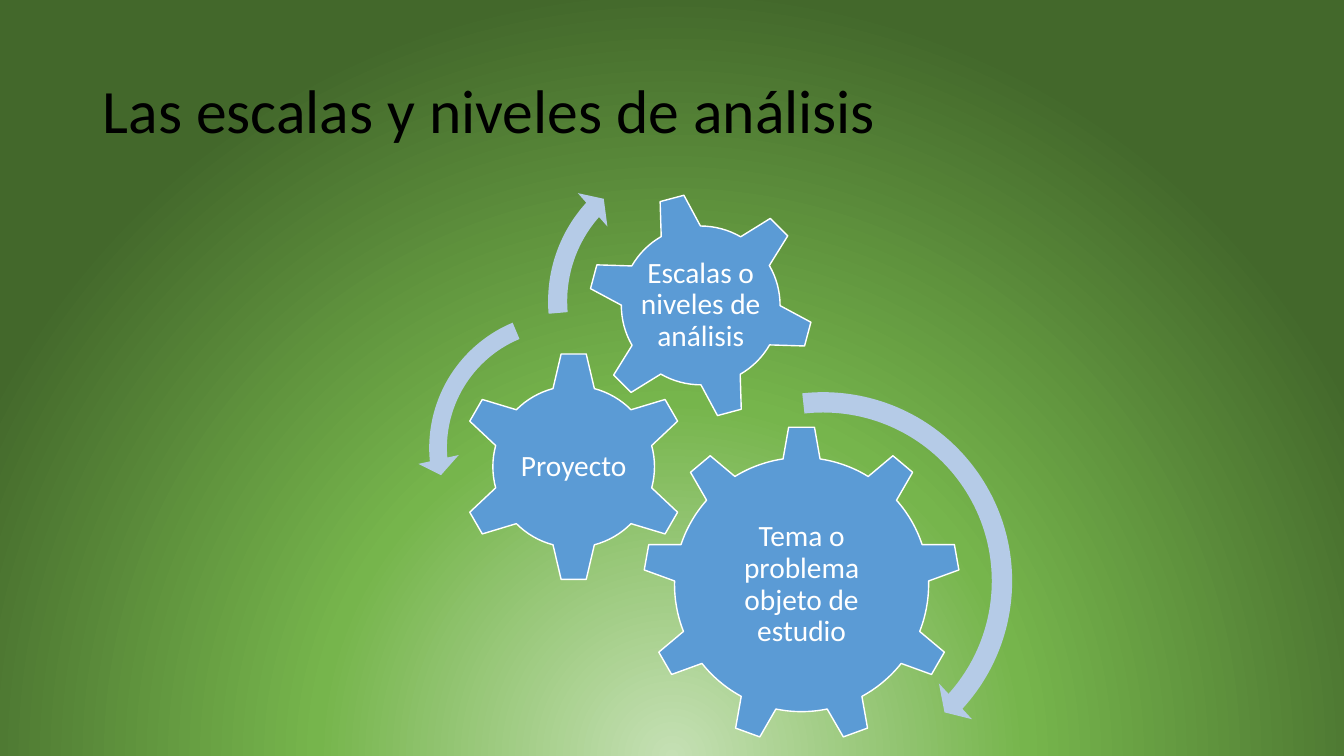
from lxml.etree import SubElement
from pptx import Presentation
from pptx.dml.color import RGBColor
from pptx.enum.shapes import MSO_SHAPE as SHAPE
from pptx.enum.text import MSO_ANCHOR as ANCHOR, PP_ALIGN as ALIGN
from pptx.oxml.ns import qn
from pptx.util import Inches, Pt

WIDTH, HEIGHT = 13.33, 7.5
FONT = "Calibri"
BACKGROUND = [(0, "C5E0B4"), (46, "76B54C"), (100, "43682B")]
GEAR_BLUE, ARROW_BLUE, WHITE, BLACK = "5B9BD5", "B5CBE7", "FFFFFF", "000000"

# kind, centre x, centre y, size, rotation, share of the size used by the text, text
GEARS = [
    (SHAPE.GEAR_9, 7.95, 5.8, 3.15, 0, 0.6, "Tema o problema objeto de estudio"),
    (SHAPE.GEAR_6, 5.69, 4.63, 2.29, 0, 0.5, "Proyecto"),
    (SHAPE.GEAR_6, 6.95, 3.03, 2.25, 345, 0.56, "Escalas o niveles de análisis"),
]
# kind, left, top, size, adjustments
ARROWS = [
    (SHAPE.CIRCULAR_ARROW, 6.15, 3.75, 4.03, (0.05, 2.99, 25.37, 158.18, 0.06)),
    (SHAPE.LEFT_CIRCULAR_ARROW, 4.14, 2.98, 2.93, (0.06, 4.3, 104.89, 148.38, 0.07)),
    (SHAPE.CIRCULAR_ARROW, 5.31, 1.41, 3.16, (0.06, 3.94, 133.14, 105.08, 0.07)),
]


def rgb(value):
    """Turn a hex string into a colour."""
    return RGBColor.from_string(value)


def paint_background(slide):
    """Fill the slide with a circular gradient centred below its lower edge."""
    slide.background.fill.gradient()
    grad = next(slide.element.iter(qn("a:gradFill")))
    for child in list(grad):
        grad.remove(child)
    stops = SubElement(grad, qn("a:gsLst"))
    for percent, color in BACKGROUND:
        stop = SubElement(stops, qn("a:gs"), pos=str(percent * 1000))
        SubElement(stop, qn("a:srgbClr"), val=color)
    circle = SubElement(grad, qn("a:path"), path="circle")
    SubElement(circle, qn("a:fillToRect"), l="50000", t="130000", r="50000", b="-30000")


def add_text(slide, box, text, size, color, align=ALIGN.LEFT, inset=None):
    """Place wrapped, vertically centred text in a box."""
    tf = slide.shapes.add_textbox(*map(Inches, box)).text_frame
    tf.word_wrap = True
    tf.vertical_anchor = ANCHOR.MIDDLE
    if inset is not None:
        tf.margin_left = tf.margin_right = Inches(inset)
        tf.margin_top = tf.margin_bottom = Inches(inset)
    tf.text = text
    p = tf.paragraphs[0]
    p.alignment, p.line_spacing = align, 0.9
    font = p.runs[0].font
    font.name, font.size, font.color.rgb = FONT, Pt(size), rgb(color)


def add_figure(slide, kind, left, top, size, fill):
    """Draw a preset shape in a square box, without line or shadow."""
    sp = slide.shapes.add_shape(kind, *map(Inches, (left, top, size, size)))
    sp.shadow.inherit = False
    sp.fill.solid()
    sp.fill.fore_color.rgb = rgb(fill)
    sp.line.fill.background()
    return sp


def add_gear(slide, kind, x, y, size, rotation, share, text):
    """Draw a gear around its centre with upright text in the middle."""
    sp = add_figure(slide, kind, x - size / 2, y - size / 2, size, GEAR_BLUE)
    sp.rotation = rotation
    sp.line.color.rgb = rgb(WHITE)
    sp.line.width = Pt(1)
    side = size * share
    box = (x - side / 2, y - side / 2, side, side)
    add_text(slide, box, text, 21, WHITE, ALIGN.CENTER, 0.03)


def add_arrow(slide, kind, left, top, size, adjustments):
    """Draw a curved arrow showing which way a gear turns."""
    sp = add_figure(slide, kind, left, top, size, ARROW_BLUE)
    for i, value in enumerate(adjustments):
        sp.adjustments[i] = value


def main():
    """Build the slide and save it."""
    prs = Presentation()
    prs.slide_width, prs.slide_height = Inches(WIDTH), Inches(HEIGHT)
    slide = prs.slides.add_slide(prs.slide_layouts[6])
    paint_background(slide)
    add_text(slide, (0.92, 0.4, 11.5, 1.45), "Las escalas y niveles de análisis", 44, BLACK)
    for gear in GEARS:
        add_gear(slide, *gear)
    for arrow in ARROWS:
        add_arrow(slide, *arrow)
    prs.save("out.pptx")


if __name__ == "__main__":
    main()
